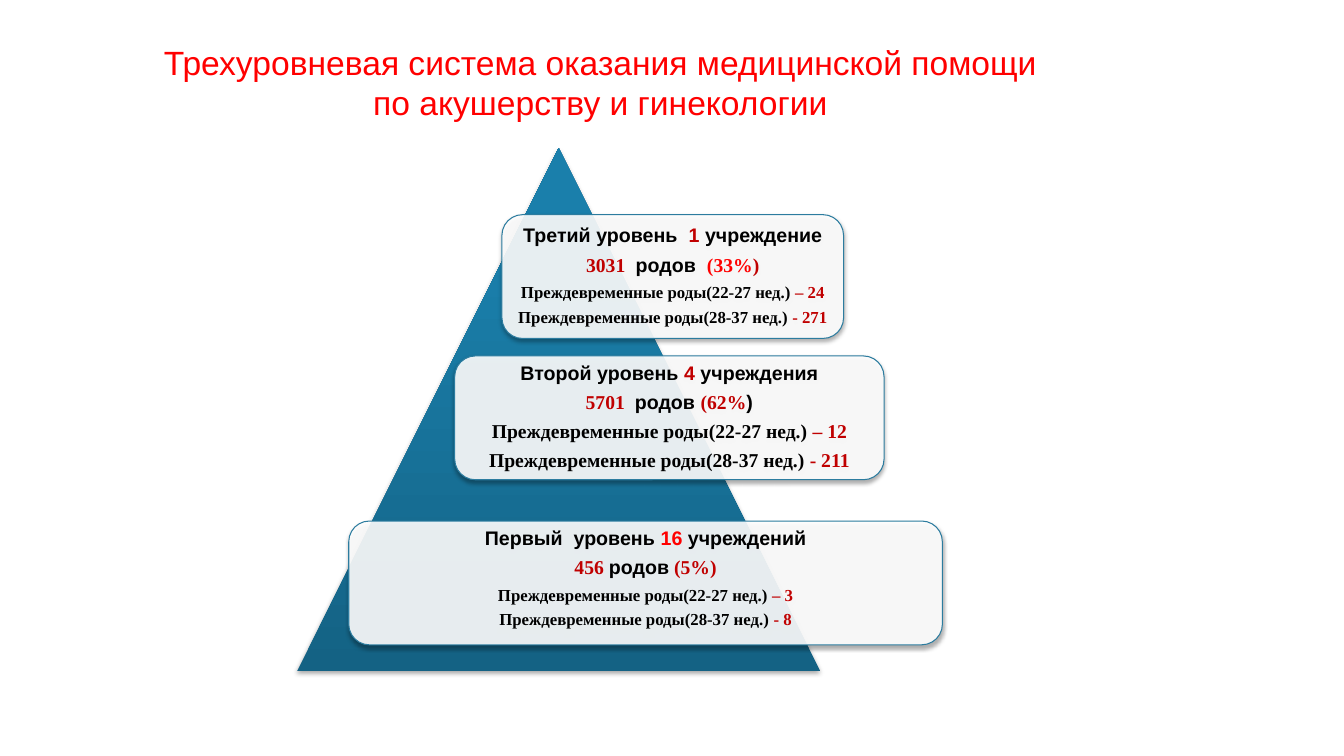
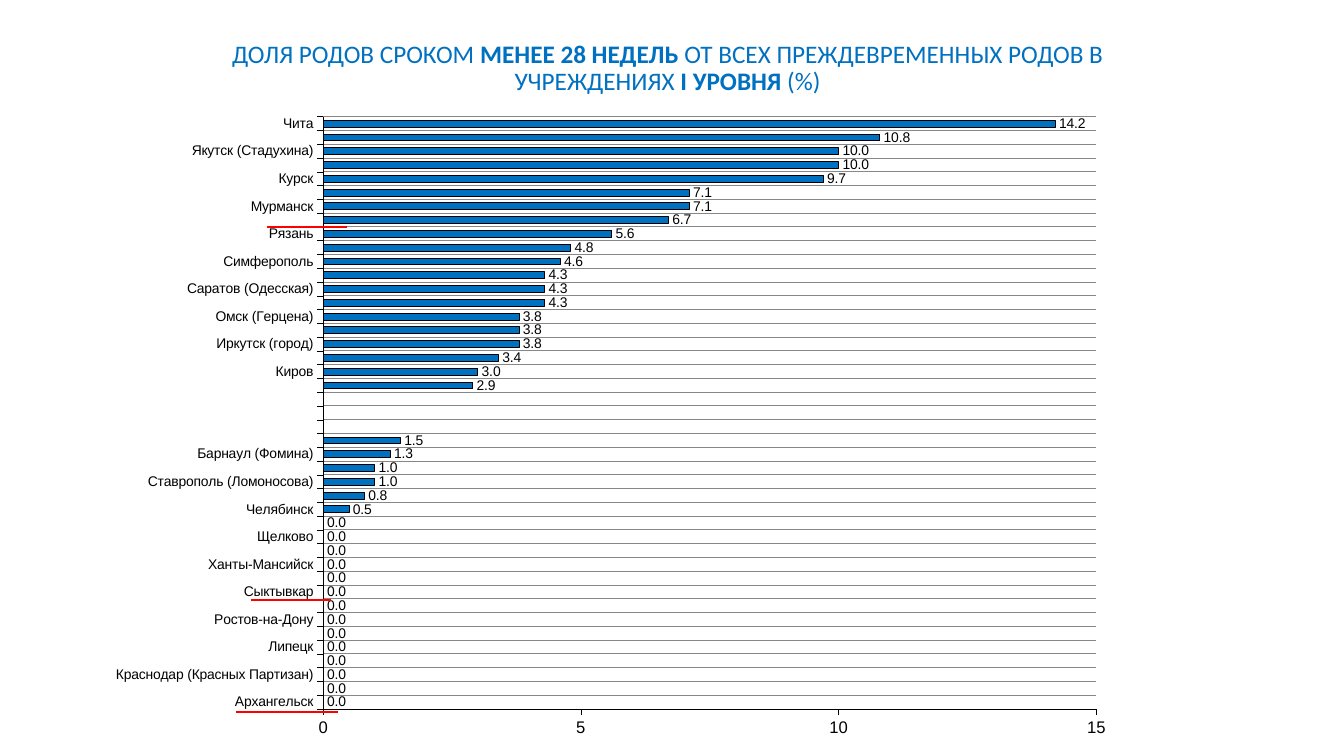
"""Build two slides on obstetric care levels and the share of early preterm births."""
from lxml.etree import SubElement
from pptx import Presentation
from pptx.chart.data import CategoryChartData
from pptx.dml.color import RGBColor
from pptx.enum.chart import XL_CHART_TYPE, XL_LABEL_POSITION, XL_TICK_MARK
from pptx.enum.shapes import MSO_CONNECTOR, MSO_SHAPE
from pptx.enum.text import MSO_ANCHOR, MSO_AUTO_SIZE, PP_ALIGN
from pptx.oxml.ns import qn
from pptx.util import Cm, Pt

BLACK, WHITE, RED, DARK_RED = "000000", "FFFFFF", "FF0000", "C00000"
BLUE, TEAL = "0070C0", "2C7C9F"
SANS, SERIF, TITLE_FONT = "Arial", "Times New Roman", "Calibri"


def color(value):
    return RGBColor.from_string(value)


def set_format(target, values):
    for name, value in values.items():
        if name == "color":
            target.color.rgb = color(value)
        else:
            setattr(target, name, value)


presentation = Presentation()
presentation.slide_width, presentation.slide_height = Cm(33.87), Cm(19.05)

titles = [
    ((3.33, 0.91, 23.6, 2.31), 1.0, {"name": SANS, "size": Pt(24), "color": RED}, [
        ("Трехуровневая система оказания медицинской помощи по акушерству и гинекологии", False),
    ]),
    ((5.13, 0.91, 23.39, 1.65), 0.9, {"name": TITLE_FONT, "size": Pt(18), "color": BLUE}, [
        ("ДОЛЯ РОДОВ СРОКОМ ", False),
        ("МЕНЕЕ 28 НЕДЕЛЬ ", True),
        ("ОТ ВСЕХ ПРЕЖДЕВРЕМЕННЫХ РОДОВ В УЧРЕЖДЕНИЯХ ", False),
        ("I УРОВНЯ", True),
        (" (%)", False),
    ]),
]
for box, line_spacing, font_format, runs in titles:
    slide = presentation.slides.add_slide(presentation.slide_layouts[5])
    title = slide.shapes.title
    title.left, title.top, title.width, title.height = [Cm(length) for length in box]
    set_format(title.text_frame, {"word_wrap": True, "auto_size": MSO_AUTO_SIZE.NONE,
                                  "vertical_anchor": MSO_ANCHOR.MIDDLE})
    paragraph = title.text_frame.paragraphs[0]
    set_format(paragraph, {"alignment": PP_ALIGN.CENTER, "line_spacing": line_spacing})
    for text, bold in runs:
        run = paragraph.add_run()
        run.text = text
        set_format(run.font, {**font_format, "bold": bold})

pyramid_slide, chart_slide = presentation.slides

triangle = pyramid_slide.shapes.add_shape(
    MSO_SHAPE.ISOSCELES_TRIANGLE, Cm(7.49), Cm(3.73), Cm(13.18), Cm(13.18))
triangle.fill.gradient()
triangle.fill.gradient_angle = 90
for stop, (position, shade) in zip(triangle.fill.gradient_stops, [(0, "146284"), (0.8, "1A7FAB")]):
    set_format(stop, {"position": position, "color": shade})
triangle.line.fill.background()
pyramid_shapes = [triangle]

levels = [
    ((12.65, 5.41, 8.61), 0, 12, "– 24", "- 271", [
        [("Третий уровень  ", SANS, BLACK), ("1 ", SANS, DARK_RED), ("учреждение", SANS, BLACK)],
        [("3031 ", SERIF, DARK_RED), (" родов  ", SANS, BLACK),
         ("(33%", SERIF, RED), (")", SERIF, DARK_RED)],
    ]),
    ((11.46, 8.97, 10.82), 0, 14, "– 12", "- 211", [
        [("Второй уровень ", SANS, BLACK), ("4", SANS, DARK_RED), (" учреждения", SANS, BLACK)],
        [("5701  ", SERIF, DARK_RED), ("родов ", SANS, BLACK),
         ("(62%", SERIF, DARK_RED), (")", SANS, BLACK)],
    ]),
    ((8.79, 13.13, 14.96), 0.2, 12, "– 3", "- 8", [
        [("Первый  уровень", SANS, BLACK), (" 16 ", SANS, RED), ("учреждений", SANS, BLACK)],
        [("456 ", SERIF, DARK_RED), ("родов", SANS, BLACK), (" (5%)", SERIF, DARK_RED)],
    ]),
]
for (left, top, width), bottom, preterm_size, early, late, heading in levels:
    shape = pyramid_slide.shapes.add_shape(
        MSO_SHAPE.ROUNDED_RECTANGLE, Cm(left), Cm(top), Cm(width), Cm(3.12))
    shape.fill.solid()
    shape.fill.fore_color.rgb = color(WHITE)
    SubElement(shape.element.spPr.find(".//" + qn("a:srgbClr")), qn("a:alpha"), val="90000")
    set_format(shape.line, {"color": TEAL, "width": Pt(0.75)})
    pyramid_shapes.append(shape)
    frame = shape.text_frame
    set_format(frame, {"word_wrap": True, "vertical_anchor": MSO_ANCHOR.MIDDLE,
                       "margin_left": 0, "margin_right": 0,
                       "margin_top": 0, "margin_bottom": Cm(bottom)})
    preterm = [[(f"Преждевременные роды({weeks} нед.) ", SERIF, BLACK), (count, SERIF, DARK_RED)]
               for weeks, count in [("22-27", early), ("28-37", late)]]
    sizes = [14, 14, preterm_size, preterm_size]
    for index, (runs, size) in enumerate(zip(heading + preterm, sizes)):
        paragraph = frame.add_paragraph() if index else frame.paragraphs[0]
        set_format(paragraph, {"alignment": PP_ALIGN.CENTER, "line_spacing": 0.9,
                               "space_after": Pt(0.4 * size)})
        for text, font_name, shade in runs:
            run = paragraph.add_run()
            run.text = text
            set_format(run.font, {"name": font_name, "size": Pt(size), "bold": True, "color": shade})

for shape in pyramid_shapes:
    shape.shadow.inherit = False
    effects = shape.element.spPr.find(qn("a:effectLst"))
    shadow = SubElement(effects, qn("a:outerShdw"), blurRad=str(Pt(3.1)), dist=str(Pt(1.8)),
                        dir="5400000", rotWithShape="0")
    shadow_color = SubElement(shadow, qn("a:srgbClr"), val=BLACK)
    SubElement(shadow_color, qn("a:alpha"), val="35000")

shares = [
    ("Архангельск", 0), ("Видное", 0), ("Краснодар (Красных Партизан)", 0),
    ("Краснодар (пл. Победы)", 0), ("Липецк", 0), ("Орёл", 0), ("Ростов-на-Дону", 0),
    ("Смоленск", 0), ("Сыктывкар", 0), ("Тюмень", 0), ("Ханты-Мансийск", 0),
    ("Чебоксары", 0), ("Щелково", 0), ("Ярославль", 0), ("Челябинск", 0.5),
    ("Хабаровск", 0.8), ("Ставрополь (Ломоносова)", 1), ("Ставрополь (Семашко)", 1),
    ("Барнаул (Фомина)", 1.3), ("Самара", 1.5), ("", None), ("", None), ("", None),
    ("Петрозаводск", 2.9), ("Киров", 3), ("Томск", 3.4), ("Иркутск (город)", 3.8),
    ("Омск (Березовая)", 3.8), ("Омск (Герцена)", 3.8), ("Саратов (Зерновая)", 4.3),
    ("Саратов (Одесская)", 4.3), ("Энгельс", 4.3), ("Симферополь", 4.6), ("Курган", 4.8),
    ("Рязань", 5.6), ("Вологда", 6.7), ("Мурманск", 7.1), ("Салехард", 7.1), ("Курск", 9.7),
    ("Якутск (Сергеляжское ш.)", 10), ("Якутск (Стадухина)", 10), ("Владивосток", 10.8),
    ("Чита", 14.2),
]
chart_data = CategoryChartData()
chart_data.categories = [city for city, share in shares]
chart_data.add_series("Series 1", [share for city, share in shares])
chart = chart_slide.shapes.add_chart(
    XL_CHART_TYPE.BAR_CLUSTERED, Cm(2.92), Cm(2.72), Cm(25.81), Cm(15.93), chart_data).chart
set_format(chart, {"has_title": False, "has_legend": False})
set_format(chart.font, {"name": SANS, "size": Pt(10), "color": BLACK})

plot = chart.plots[0]
set_format(plot, {"gap_width": 100, "vary_by_categories": False, "has_data_labels": True})
set_format(plot.data_labels, {"show_value": True, "number_format": "0.0",
                              "number_format_is_linked": False,
                              "position": XL_LABEL_POSITION.OUTSIDE_END})
set_format(plot.data_labels.font, {"name": SANS, "size": Pt(10), "color": BLACK})
series = plot.series[0]
series.format.fill.solid()
series.format.fill.fore_color.rgb = color(BLUE)
set_format(series.format.line, {"color": BLACK, "width": Pt(0.5)})

city_axis, share_axis = chart.category_axis, chart.value_axis
for axis, size, gridlines in [(city_axis, 10, True), (share_axis, 12, False)]:
    set_format(axis, {"has_major_gridlines": gridlines, "major_tick_mark": XL_TICK_MARK.OUTSIDE})
    set_format(axis.tick_labels.font, {"name": SANS, "size": Pt(size), "color": BLACK})
    set_format(axis.format.line, {"color": BLACK, "width": Pt(0.38)})
set_format(city_axis.major_gridlines.format.line, {"color": "878787", "width": Pt(0.75)})
set_format(share_axis, {"minimum_scale": 0, "maximum_scale": 15, "major_unit": 5})

axis_element = chart.element.find(".//" + qn("c:catAx"))
label_skip = SubElement(axis_element, qn("c:tickLblSkip"), val="1")
axis_element.find(qn("c:noMultiLvlLbl")).addprevious(label_skip)

plot_area = chart.element.find(".//" + qn("c:plotArea"))
for layout in plot_area.findall(qn("c:layout")):
    plot_area.remove(layout)
layout = SubElement(plot_area, qn("c:layout"))
plot_area.insert(0, layout)
manual_layout = SubElement(layout, qn("c:manualLayout"))
for tag, value in [("layoutTarget", "inner"), ("xMode", "edge"), ("yMode", "edge"),
                   ("x", "0.195"), ("y", "0.014"), ("w", "0.762"), ("h", "0.937")]:
    SubElement(manual_layout, qn(f"c:{tag}"), val=value)

for start, end, height in [(6.73, 8.74, 5.72), (6.32, 8.33, 15.11), (5.94, 8.53, 17.93)]:
    underline = chart_slide.shapes.add_connector(
        MSO_CONNECTOR.STRAIGHT, Cm(start), Cm(height), Cm(end), Cm(height))
    set_format(underline.line, {"color": RED, "width": Pt(1.5)})
    SubElement(underline.element.spPr, qn("a:effectLst"))

presentation.save("out.pptx")
